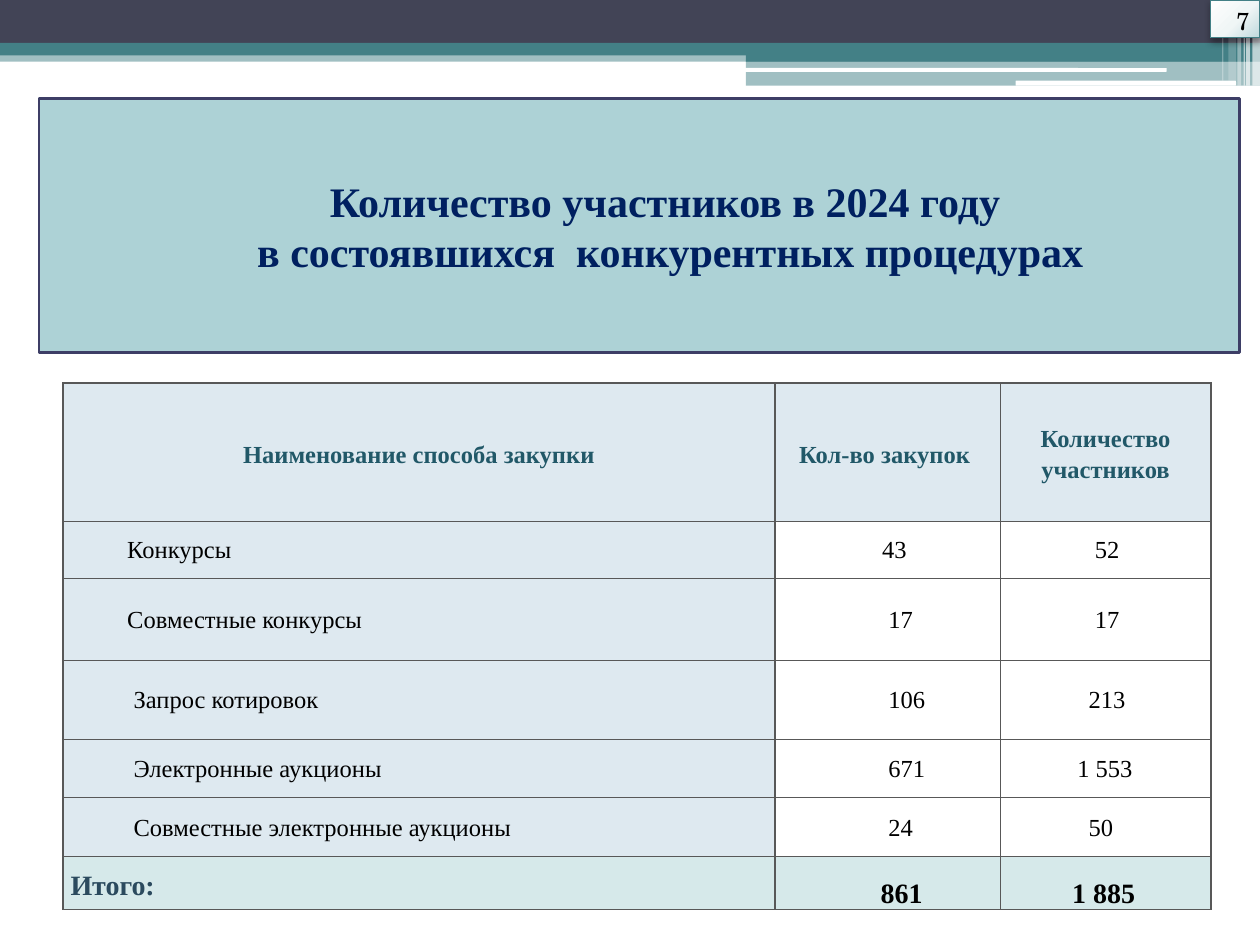
"""Builds the slide on participants in the competitive procedures of 2024."""
import pptx
import pptx.dml.color
import pptx.enum.shapes
import pptx.enum.text
import pptx.oxml
import pptx.oxml.ns
import pptx.util
from lxml import etree

Inches = pptx.util.Inches
Pt = pptx.util.Pt
Align = pptx.enum.text.PP_ALIGN
Anchor = pptx.enum.text.MSO_ANCHOR
Preset = pptx.enum.shapes.MSO_SHAPE

COLORS = {
    "white": "FFFFFF", "black": "000000", "dark": "424456", "teal": "438086",
    "panel": "ADD2D6", "panel_line": "3D3E66", "title": "002060",
    "head_text": "215868", "name_fill": "DEE9F0", "total_fill": "D6E9EA",
    "total_text": "2B4A5E", "border": "585858",
}
FONT = "Times New Roman"
NAMESPACE = pptx.oxml.ns.nsdecls("a")
BADGE_STOPS = [(0, "FEFEFE"), (55, "F0F6F6"), (100, "BFD9DD")]

BARS = [
    (0, 0.4, 10, 0.09, "teal", 50), (0, 0, 10, 0.34, "dark", 100),
    (0, 0.34, 10, 0.1, "teal", 100), (5.92, 0.39, 4.08, 0.1, "teal", 100),
    (5.92, 0.48, 4.08, 0.2, "teal", 50),
]
ROUNDED_BARS = [(5.91, 0.54, 3.35, 0.03), (8.06, 0.64, 1.75, 0.04)]
STRIPES = [
    (9.94, 0.06, 0.68, 65), (9.89, 0.03, 0.68, 65), (9.87, 0.01, 0.68, 60),
    (9.82, 0.03, 0.68, 40), (9.75, 0.06, 0.64, 20), (9.7, 0.01, 0.64, 30),
]
TITLE = ["Количество участников в 2024 году ", "в состоявшихся  конкурентных процедурах"]
COLUMN_WIDTHS = [5.65, 1.79, 1.67]
ROW_HEIGHTS = [1.1, 0.45, 0.65, 0.63, 0.46, 0.47, 0.42]
HEADERS = ["Наименование способа закупки", "Кол-во закупок ", "Количество участников"]
ROWS = [
    [("Конкурсы", 0.5), ("43", 0.84), ("52", 0.74)],
    [("Совместные конкурсы", 0.5), ("17", 0.89), ("17", 0.74)],
    [("Запрос котировок", 0.55), ("106", 0.89), ("213", 0.69)],
    [("Электронные аукционы", 0.55), ("671", 0.89), ("1 553", 0.6)],
    [("Совместные электронные аукционы", 0.55), ("24", 0.89), ("50", 0.69)],
]
TOTALS = [("861", 0.83), ("1 885", 0.56)]


class SlideBuilder:
    """Holds the style and the current slide."""

    def __init__(self, slide):
        self.slide = slide

    def color(self, name):
        return pptx.dml.color.RGBColor.from_string(COLORS[name])

    def paint(self, shape, fill, line=None, width=0.75):
        shape.fill.solid()
        shape.fill.fore_color.rgb = self.color(fill)
        if line:
            shape.line.color.rgb = self.color(line)
            shape.line.width = Pt(width)
        else:
            shape.line.fill.background()

    def bar(self, left, top, width, height, fill, opacity=100, preset=Preset.RECTANGLE):
        shape = self.slide.shapes.add_shape(
            preset, Inches(left), Inches(top), Inches(width), Inches(height))
        shape.shadow.inherit = False
        self.paint(shape, fill)
        if opacity < 100:
            color = shape.element.spPr.find(".//" + pptx.oxml.ns.qn("a:srgbClr"))
            etree.SubElement(color, pptx.oxml.ns.qn("a:alpha"), val=str(opacity * 1000))
        return shape

    def text(self, paragraph, text, size, color, bold=False, font=FONT,
             align=Align.LEFT, margin=0, indent=0):
        paragraph.alignment = align
        properties = paragraph._p.get_or_add_pPr()
        properties.set("marL", str(Inches(margin)))
        properties.set("indent", str(Inches(indent)))
        run = paragraph.add_run()
        run.text = text
        run.font.size = Pt(size)
        run.font.bold = bold
        run.font.name = font
        run.font.color.rgb = self.color(color)

    def title(self, lines, left, top, width, height):
        title = self.slide.shapes.title
        title.left, title.top = Inches(left), Inches(top)
        title.width, title.height = Inches(width), Inches(height)
        title.element.spPr.append(pptx.oxml.parse_xml(
            f'<a:prstGeom {NAMESPACE} prst="roundRect"><a:avLst/></a:prstGeom>'))
        self.paint(title, "panel", "panel_line", 1.5)
        frame = title.text_frame
        frame.word_wrap = True
        frame.auto_size = pptx.enum.text.MSO_AUTO_SIZE.NONE
        frame.vertical_anchor = Anchor.MIDDLE
        for number, line in enumerate(lines):
            paragraph = frame.add_paragraph() if number else frame.paragraphs[0]
            self.text(paragraph, line, 24, "title", True, align=Align.CENTER, indent=0.49)

    def badge(self, text, left, top, width, height):
        shape = self.bar(left, top, width, height, "white")
        self.paint(shape, "white", "teal")
        properties = shape.element.spPr
        stops = "".join(f'<a:gs pos="{position * 1000}"><a:srgbClr val="{color}"/></a:gs>'
                        for position, color in BADGE_STOPS)
        properties.replace(properties.find(pptx.oxml.ns.qn("a:solidFill")), pptx.oxml.parse_xml(
            f'<a:gradFill {NAMESPACE} rotWithShape="1"><a:gsLst>{stops}</a:gsLst>'
            '<a:path path="circle"><a:fillToRect l="-40000" t="-90000" r="140000" b="190000"/>'
            '</a:path></a:gradFill>'))
        properties.find(pptx.oxml.ns.qn("a:effectLst")).append(pptx.oxml.parse_xml(
            f'<a:outerShdw {NAMESPACE} blurRad="{Pt(4.1)}" dist="{Pt(2)}" dir="5400000">'
            f'<a:srgbClr val="{COLORS["black"]}"><a:alpha val="40000"/></a:srgbClr></a:outerShdw>'))
        shape.text_frame.word_wrap = True
        shape.text_frame.vertical_anchor = Anchor.TOP
        paragraph = shape.text_frame.paragraphs[0]
        paragraph.space_before = Pt(3)
        self.text(paragraph, text, 14, "black", font="TeX Gyre Schola",
                  align=Align.CENTER, margin=0.12)

    def table(self, left, top, widths, heights):
        table = self.slide.shapes.add_table(
            len(heights), len(widths), Inches(left), Inches(top),
            Inches(sum(widths)), Inches(sum(heights))).table
        table.first_row = table.horz_banding = False
        for column, width in zip(table.columns, widths):
            column.width = Inches(width)
        for row, height in zip(table.rows, heights):
            row.height = Inches(height)
        return table

    def cell(self, cell, text, size, color, fill=None, bold=False, side=0.01,
             anchor=Anchor.MIDDLE, spacing=None, **layout):
        cell.margin_left = cell.margin_right = Inches(side)
        cell.margin_top = Inches(0.01)
        cell.margin_bottom = 0
        cell.vertical_anchor = anchor
        for edge in "LRTB":
            cell._tc.get_or_add_tcPr().append(pptx.oxml.parse_xml(
                f'<a:ln{edge} {NAMESPACE} w="{Pt(1)}"><a:solidFill>'
                f'<a:srgbClr val="{COLORS["border"]}"/></a:solidFill></a:ln{edge}>'))
        if fill:
            cell.fill.solid()
            cell.fill.fore_color.rgb = self.color(fill)
        else:
            cell.fill.background()
        paragraph = cell.text_frame.paragraphs[0]
        if spacing:
            paragraph.line_spacing = spacing
        self.text(paragraph, text, size, color, bold, **layout)


def main():
    presentation = pptx.Presentation()
    presentation.slide_width, presentation.slide_height = Inches(10), Inches(7.5)
    builder = SlideBuilder(presentation.slides.add_slide(presentation.slide_layouts[5]))

    for bar in BARS:
        builder.bar(*bar)
    for bar in ROUNDED_BARS:
        builder.bar(*bar, "white", preset=Preset.ROUNDED_RECTANGLE)
    for left, width, height, opacity in STRIPES:
        builder.bar(left, 0, width, height, "white", opacity)

    table = builder.table(0.5, 3.04, COLUMN_WIDTHS, ROW_HEIGHTS)
    for column, header in enumerate(HEADERS):
        builder.cell(table.cell(0, column), header, 14, "head_text", "name_fill", True,
                     side=0.06, spacing=1.15, align=Align.CENTER)
    for row, values in enumerate(ROWS, 1):
        for column, (text, margin) in enumerate(values):
            builder.cell(table.cell(row, column), text, 14, "black",
                         None if column else "name_fill", margin=margin)
    last = len(ROW_HEIGHTS) - 1
    builder.cell(table.cell(last, 0), "Итого:", 16, "total_text", "total_fill", True,
                 side=0.06, spacing=1.15)
    for column, (text, margin) in enumerate(TOTALS, 1):
        builder.cell(table.cell(last, column), text, 16, "black", "total_fill", True,
                     anchor=Anchor.BOTTOM, margin=margin)

    builder.title(TITLE, 0.31, 0.78, 9.53, 2.02)
    builder.badge("7", 9.61, 0, 0.39, 0.3)
    presentation.save("out.pptx")


if __name__ == "__main__":
    main()
